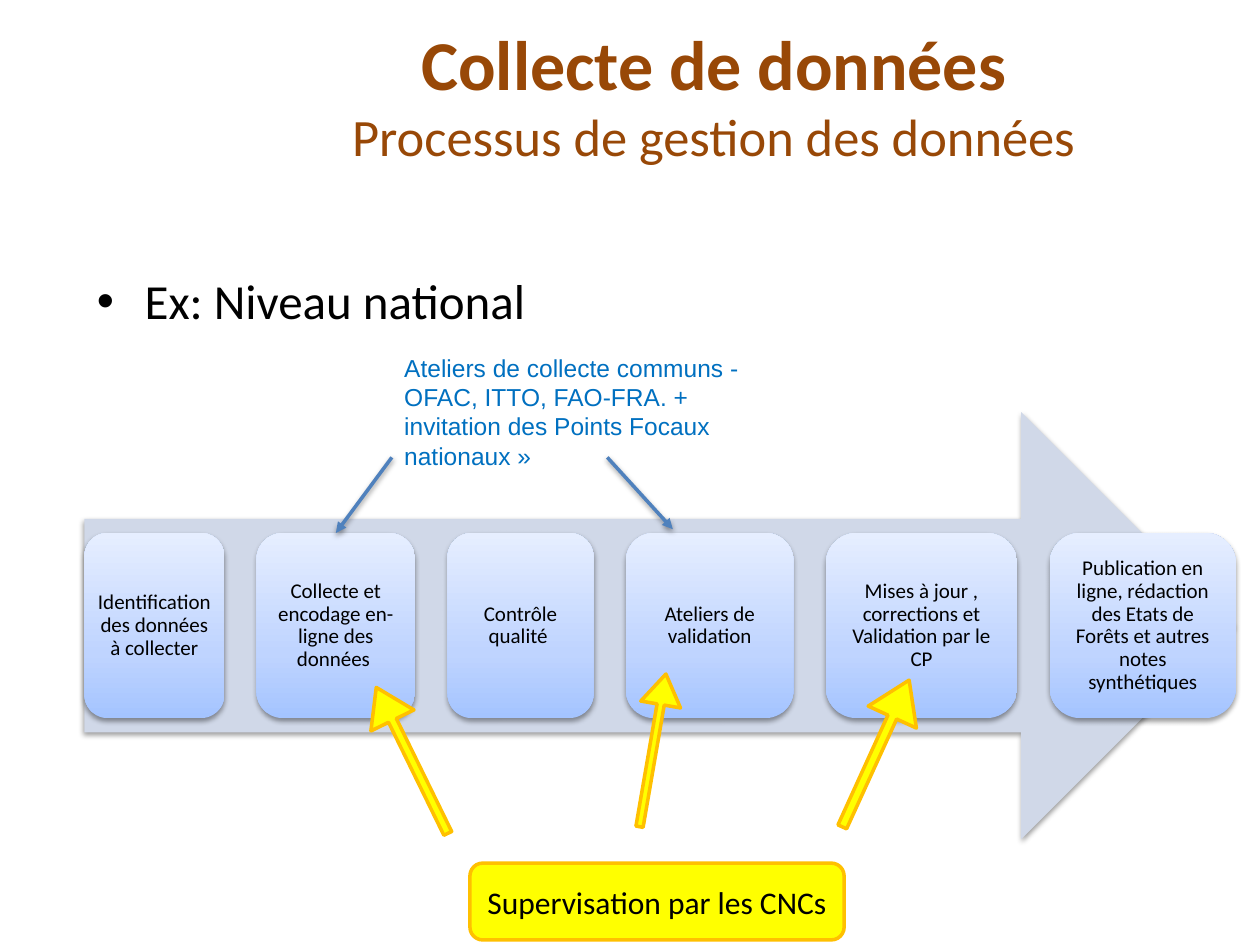
from pptx import Presentation
from pptx.dml.color import RGBColor
from pptx.enum.shapes import MSO_CONNECTOR, MSO_SHAPE
from pptx.enum.text import MSO_ANCHOR, MSO_AUTO_SIZE, PP_ALIGN
from pptx.oxml.ns import qn
from pptx.util import Inches, Pt
from lxml import etree

CENTER, MIDDLE = PP_ALIGN.CENTER, MSO_ANCHOR.MIDDLE
GROW, STRAIGHT = MSO_AUTO_SIZE.SHAPE_TO_FIT_TEXT, MSO_CONNECTOR.STRAIGHT
RIGHT_ARROW, DOWN_ARROW = MSO_SHAPE.RIGHT_ARROW, MSO_SHAPE.DOWN_ARROW
ROUNDED = MSO_SHAPE.ROUNDED_RECTANGLE
TOP_SIDE = 0

COLUMNS, ROWS, CELL = 100, 75, 0.1
BLACK, BROWN, BLUE, STEEL = "000000", "984807", "0070C0", "4F81BD"
YELLOW, AMBER, PALE = "FFFF00", "FFC000", "D0D8E8"
STEP_STOPS = [(0, "A4C4FF"), (35, "BFD4FF"), (100, "E6EEFF")]

LEFT, SPAN, STEP_TOP, STEP_HEIGHT = 6.7, 91.4, 42.3, 14.7
STEPS = [
    (11.1, "Identification des données à collecter"),
    (12.6, "Collecte et encodage en-ligne des données "),
    (11.6, "Contrôle qualité "),
    (13.3, "Ateliers de validation"),
    (15.2, "Mises à jour , corrections et Validation par le CP"),
    (14.8, "Publication en ligne, rédaction des Etats de Forêts et autres notes synthétiques"),
]
SUPERVISION_ARROWS = [
    ((30.8, 53.9, 3.8, 12.9), 153.9),
    ((50.2, 53.4, 3.2, 12.3), 189.8),
    ((67.4, 53.4, 4.2, 12.8), 204.5),
]


def color(value):
    return RGBColor.from_string(value)


def grid(*cells):
    return [Inches(count * CELL) for count in cells]


def child(parent, tag, **attributes):
    return etree.SubElement(parent, qn(tag), {k: str(v) for k, v in attributes.items()})


class Board:
    """Current slide and its style; every place is given in grid cells."""

    font = "Calibri"

    def __init__(self, page):
        self.page = page

    def set_text(self, box, text, size, ink=BLACK, font=None, align=None):
        box.text_frame.word_wrap = True
        para = box.text_frame.paragraphs[0]
        para.text = text
        para.alignment = align
        para.font.name = font or self.font
        para.font.size = Pt(size)
        para.font.color.rgb = color(ink)
        return para

    def textbox(self, place, text, size, **style):
        box = self.page.shapes.add_textbox(*grid(*place))
        return box, self.set_text(box, text, size, **style)

    def title(self, place, heading, subtitle):
        box, para = self.textbox(place, "", 40, ink=BROWN, align=CENTER)
        box.text_frame.vertical_anchor = MIDDLE
        span = para.add_run()
        span.text, span.font.bold = heading, True
        para.add_line_break()
        span = para.add_run()
        span.text, span.font.size = subtitle, Pt(30)

    def bullet(self, place, text, size):
        box = self.page.shapes.add_textbox(*grid(*place))
        para = box.text_frame.paragraphs[0]
        para.space_after = Pt(12)
        properties = para._p.get_or_add_pPr()
        properties.set("marL", str(Inches(0.38)))
        properties.set("indent", str(-Inches(0.38)))
        child(properties, "a:buFont", typeface="Arial")
        child(properties, "a:buChar", char="•")
        self.set_text(box, text, size)

    def shape(self, kind, place, fill=None, line=None):
        shape = self.page.shapes.add_shape(kind, *grid(*place))
        shape.shadow.inherit = False
        if fill:
            shape.fill.solid()
            shape.fill.fore_color.rgb = color(fill)
        if line:
            shape.line.color.rgb = color(line)
            shape.line.width = Pt(2)
        else:
            shape.line.fill.background()
        return shape

    def drop_shadow(self, item):
        properties = item._element.spPr
        effects = properties.find(qn("a:effectLst"))
        if effects is None:
            effects = child(properties, "a:effectLst")
        shadow = child(effects, "a:outerShdw", blurRad=Pt(3.1), dist=Pt(1.6),
                       dir=90 * 60000, rotWithShape=0)
        child(child(shadow, "a:srgbClr", val=BLACK), "a:alpha", val=38000)

    def step(self, place, text):
        card = self.shape(ROUNDED, place)
        card.fill.gradient()
        card.fill.gradient_angle = 90
        stops = card._element.spPr.find(qn("a:gradFill")).find(qn("a:gsLst"))
        for stop in list(stops):
            stops.remove(stop)
        for position, value in STEP_STOPS:
            child(child(stops, "a:gs", pos=position * 1000), "a:srgbClr", val=value)
        self.drop_shadow(card)
        frame = card.text_frame
        frame.margin_left = frame.margin_right = Inches(0.05)
        frame.margin_top = frame.margin_bottom = Inches(0.05)
        frame.vertical_anchor = MIDDLE
        self.set_text(card, text, 12, align=CENTER).line_spacing = 0.9
        return card

    def block_arrow(self, place, rotation):
        arrow = self.shape(DOWN_ARROW, place, YELLOW, AMBER)
        arrow.rotation = rotation
        arrow.adjustments[0], arrow.adjustments[1] = 0.18, 0.767

    def line_arrow(self, start, end, target=None):
        arrow = self.page.shapes.add_connector(STRAIGHT, *grid(*start, *end))
        if target is not None:
            arrow.end_connect(target, TOP_SIDE)
        arrow.line.color.rgb = color(STEEL)
        arrow.line.width = Pt(2)
        child(arrow._element.spPr.find(qn("a:ln")), "a:tailEnd", type="triangle")
        self.drop_shadow(arrow)


def main():
    deck = Presentation()
    deck.slide_width, deck.slide_height = grid(COLUMNS, ROWS)
    board = Board(deck.slides.add_slide(deck.slide_layouts[6]))

    board.bullet((6.7, 21, 88.3, 46), "Ex: Niveau national", 28)
    board.drop_shadow(board.shape(RIGHT_ARROW, (LEFT, 32.7, 91.3, 33.9), PALE))

    gap = (SPAN - sum(width for width, _ in STEPS)) / (len(STEPS) - 1)
    left, cards = LEFT, []
    for width, text in STEPS:
        cards.append(board.step((left, STEP_TOP, width, STEP_HEIGHT), text))
        left += width + gap

    supervision = board.shape(ROUNDED, (37.3, 68.5, 29.7, 6.1), YELLOW, AMBER)
    supervision.text_frame.vertical_anchor = MIDDLE
    board.set_text(supervision, "Supervisation par les CNCs", 18, align=CENTER)
    for place, rotation in SUPERVISION_ARROWS:
        board.block_arrow(place, rotation)

    board.title((16.1, 1.2, 81.1, 12.5), "Collecte de données",
                "Processus de gestion des données")
    workshops, _ = board.textbox(
        (31.1, 27.5, 29.1, 10.4),
        "Ateliers de collecte communs - OFAC, ITTO, FAO-FRA. + "
        "invitation des Points Focaux nationaux »",
        14, ink=BLUE, font="Arial")
    workshops.text_frame.auto_size = GROW
    board.line_arrow((48.2, 36.3), (53.4, 42))
    board.line_arrow((31.1, 36.3), (26.4, 42.2), target=cards[1])

    deck.save("out.pptx")


if __name__ == "__main__":
    main()
